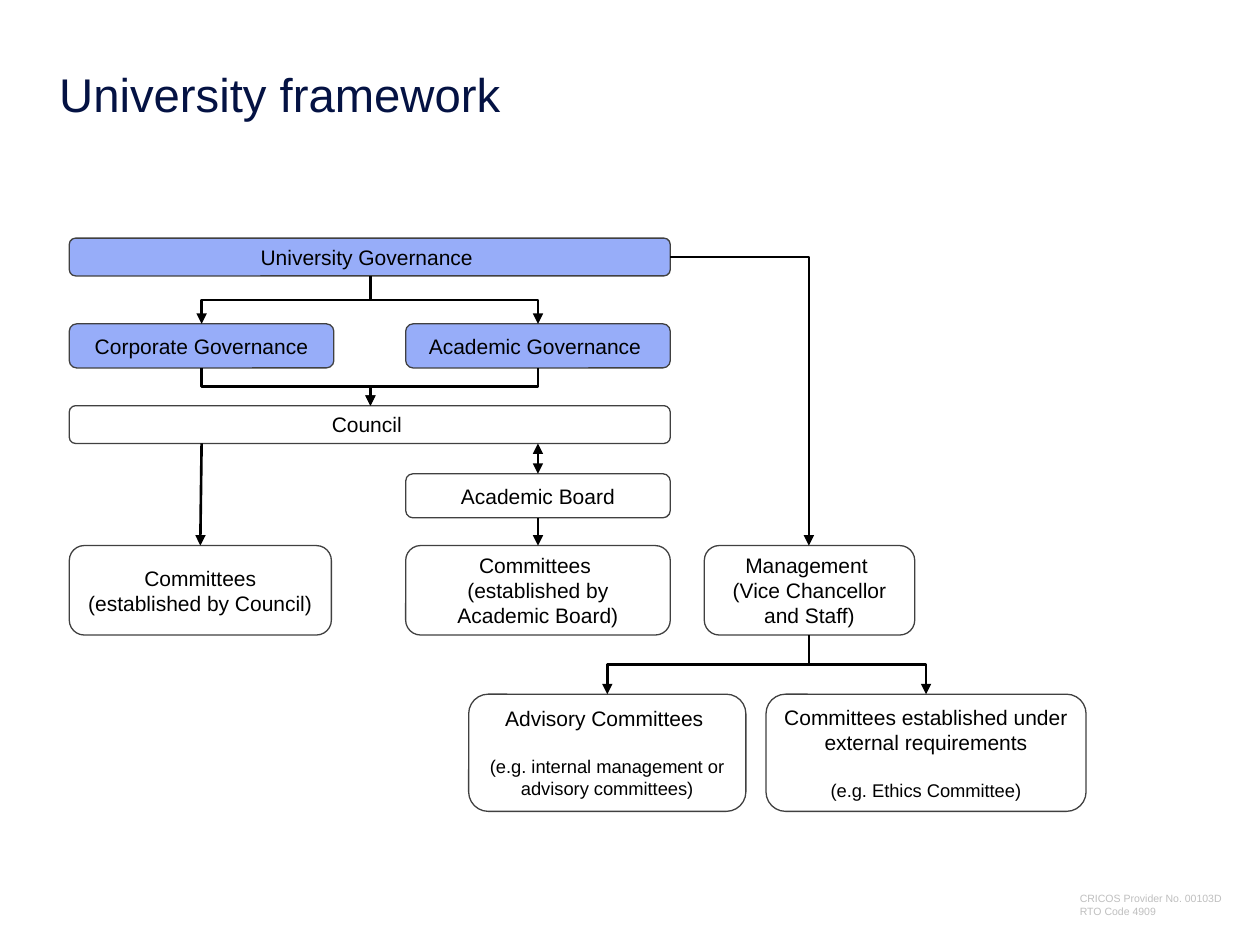
from dataclasses import dataclass

from lxml.etree import SubElement
from pptx import Presentation
from pptx.dml.color import RGBColor
from pptx.enum.shapes import MSO_CONNECTOR, MSO_SHAPE
from pptx.enum.text import MSO_ANCHOR, PP_ALIGN
from pptx.oxml.ns import qn
from pptx.util import Inches, Pt


@dataclass(frozen=True)
class Theme:
    font: str = "Arial"
    navy: RGBColor = RGBColor(0x04, 0x12, 0x43)
    blue: RGBColor = RGBColor(0x97, 0xAD, 0xF9)
    outline: RGBColor = RGBColor(0x40, 0x40, 0x40)
    black: RGBColor = RGBColor(0, 0, 0)
    grey: RGBColor = RGBColor(0xBF, 0xBF, 0xBF)
    title: float = 27
    body: float = 12
    example: float = 10.5
    footer: float = 6


theme = Theme()


def format_paragraph(paragraph, size, color):
    for run in paragraph.runs:
        run.font.name = theme.font
        run.font.size = Pt(size)
        run.font.color.rgb = color


def add_arrow(kind, start, end, both_ends=False):
    """Draw a "straight", "corner" (across, down) or "step" (down, across, down) arrow."""
    (x1, y1), (x2, y2) = start, end
    if kind == "step":
        # A step is a sideways elbow turned a quarter about its centre
        center_x, center_y = (x1 + x2) / 2, (y1 + y2) / 2
        half_width, half_height = (y2 - y1) / 2, abs(x2 - x1) / 2
        ends = (center_x - half_width, center_y - half_height,
                center_x + half_width, center_y + half_height)
    else:
        ends = (x1, y1, x2, y2)
    shape_type = MSO_CONNECTOR.STRAIGHT if kind == "straight" else MSO_CONNECTOR.ELBOW
    connector = slide.shapes.add_connector(shape_type, *[Inches(value) for value in ends])
    connector.line.color.rgb = theme.black
    connector.line.width = Pt(1.5)

    properties = connector._element.spPr
    if kind == "step":
        transform = properties.find(qn("a:xfrm"))
        transform.set("rot", str((90 if x2 < x1 else 270) * 60000))
        if x2 > x1:
            transform.set("flipH", "1")
    elif kind == "corner":
        properties.find(qn("a:prstGeom")).set("prst", "bentConnector2")
    line = properties.find(qn("a:ln"))
    for tag in ("a:headEnd", "a:tailEnd") if both_ends else ("a:tailEnd",):
        SubElement(line, qn(tag), type="triangle")
    SubElement(properties, qn("a:effectLst"))


presentation = Presentation()
presentation.slide_width = Inches(10)
presentation.slide_height = Inches(7.5)
slide = presentation.slides.add_slide(presentation.slide_layouts[6])

# Title and provider footer
captions = [
    ("University framework", (0.47, 0.57, 9.06, 0.79), theme.title, theme.navy, True, 0.9),
    ("CRICOS Provider No. 00103D \nRTO Code 4909", (8.57, 7.08, 1.18, 0.2),
     theme.footer, theme.grey, False, 1.0),
]
for text, place, size, color, wrap, spacing in captions:
    caption = slide.shapes.add_textbox(*[Inches(value) for value in place])
    frame = caption.text_frame
    frame.margin_left = frame.margin_right = frame.margin_top = frame.margin_bottom = 0
    frame.word_wrap = wrap
    paragraph = frame.paragraphs[0]
    paragraph.text = text
    paragraph.line_spacing = spacing
    format_paragraph(paragraph, size, color)

# Framework boxes: label, example, place, highlighted
left, middle, wide, narrow = 0.55, 3.22, 4.77, 2.1
committee_top, committee_height = 4.33, 0.71
advisory_top, advisory_height = 5.51, 0.93
boxes = [
    ("University Governance ", "", (left, 1.89, wide, 0.3), True),
    ("Corporate Governance", "", (left, 2.57, narrow, 0.35), True),
    ("Academic Governance ", "", (middle, 2.57, narrow, 0.35), True),
    ("Council ", "", (left, 3.22, wide, 0.3), False),
    ("Academic Board", "", (middle, 3.76, narrow, 0.35), False),
    ("Committees\n(established by Council)", "",
     (left, committee_top, 2.08, committee_height), False),
    ("Committees \n(established by Academic Board)", "",
     (middle, committee_top, narrow, committee_height), False),
    ("Management \n(Vice Chancellor and Staff)", "",
     (5.59, committee_top, 1.67, committee_height), False),
    ("Committees established under external requirements", "(e.g. Ethics Committee)",
     (6.08, advisory_top, 2.54, advisory_height), False),
    ("Advisory Committees ", "(e.g. internal management or advisory committees)",
     (3.72, advisory_top, 2.2, advisory_height), False),
]
for label, example, place, highlighted in boxes:
    shape = slide.shapes.add_shape(
        MSO_SHAPE.ROUNDED_RECTANGLE, *[Inches(value) for value in place])
    shape.shadow.inherit = False
    if highlighted:
        shape.fill.solid()
        shape.fill.fore_color.rgb = theme.blue
    else:
        shape.fill.background()
    shape.line.color.rgb = theme.outline
    shape.line.width = Pt(0.75)
    frame = shape.text_frame
    frame.word_wrap = True
    frame.vertical_anchor = MSO_ANCHOR.MIDDLE
    paragraph = frame.paragraphs[0]
    paragraph.text = label
    paragraph.alignment = PP_ALIGN.CENTER
    format_paragraph(paragraph, theme.body, theme.black)
    if example:
        paragraph = frame.add_paragraph()
        paragraph.text = example
        paragraph.alignment = PP_ALIGN.CENTER
        paragraph.space_before = Pt(14)
        format_paragraph(paragraph, theme.example, theme.black)

# Arrows between governance levels
corporate_x, council_x, academic_x, management_x = 1.6, 2.94, 4.27, 6.42
for branch_x in (corporate_x, academic_x):
    add_arrow("step", (council_x, 2.19), (branch_x, 2.57))
    add_arrow("step", (branch_x, 2.92), (council_x, 3.22))
add_arrow("corner", (5.32, 2.04), (management_x, committee_top))

# Arrows to the board and committees
add_arrow("straight", (academic_x, 4.11), (academic_x, committee_top))
add_arrow("straight", (academic_x, 3.76), (academic_x, 3.52), both_ends=True)
add_arrow("straight", (corporate_x, 3.52), (1.59, committee_top))

# Arrows from management to its committees
for branch_x in (4.82, 7.35):
    add_arrow("step", (management_x, 5.04), (branch_x, advisory_top))

presentation.save("out.pptx")
